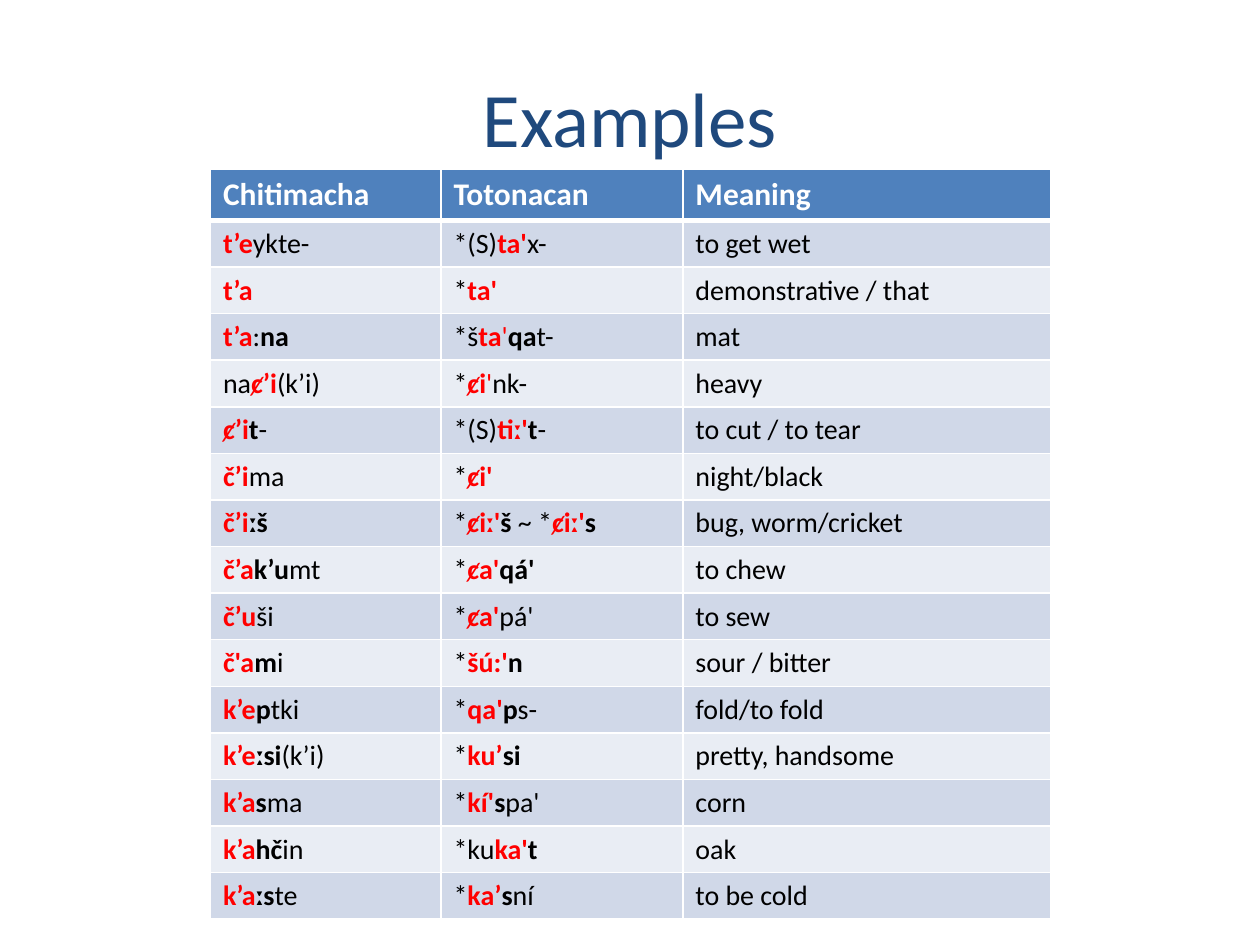
from lxml.etree import SubElement
from pptx import Presentation
from pptx.dml.color import RGBColor
from pptx.enum.text import MSO_ANCHOR, PP_ALIGN
from pptx.oxml.ns import qn
from pptx.util import Inches, Pt

COLORS = {
    "title": "1F497D", "header": "4F81BD", "odd": "D0D8E8", "even": "E9EDF4",
    "white": "FFFFFF", "black": "000000", "red": "FF0000",
}

# Runs are separated by "|"; a leading mark gives the (colour, bold) style
RUN_STYLES = {"!": ("red", True), "^": ("red", False), "+": ("black", True)}

HEADER = ["Chitimacha", "Totonacan", "Meaning"]
EXAMPLES = [
    ("!t’e|ykte-", "*(S)|!ta'|x-", "to get wet"),
    ("!t’a", "*|!ta'", "demonstrative / that"),
    ("!t’a|:|+na", "*š|!ta|^'|+qa|t-", "mat"),
    ("na|!ȼ’i|(k’i)", "*|!ȼi|^'|nk-", "heavy"),
    ("!ȼ’i|+t|-", "*(S)|!tiː'|+t|-", "to cut / to tear"),
    ("!č’i|ma", "*|!ȼi'", "night/black"),
    ("!č’i|+ːš", "*|!ȼiː'|+š| ~ *|!ȼiː'|+s", "bug, worm/cricket"),
    ("!č’a|+k’u|mt", "*|!ȼa'|+qá'", "to chew"),
    ("!č’u|ši", "*|!ȼa'|pá'", "to sew"),
    ("!č'a|+m|i", "*|!šú:'|+n", "sour / bitter"),
    ("!k’e|+p|tki", "*|!qa'|+p|s-", "fold/to fold"),
    ("!k’e|+ːsi|(k’i)", "*|!ku’|+si", "pretty, handsome"),
    ("!k’a|+s|ma", "*|!kí'|+s|pa'", "corn"),
    ("!k’a|+hč|in", "*ku|!ka'|+t", "oak"),
    ("!k’a|+ːs|te", "*|!ka’|+s|ní", "to be cold"),
]


class SlideBuilder:
    font = "Calibri"

    def __init__(self, slide):
        self.slide = slide

    def add_run(self, paragraph, text, size, color, bold=False):
        run = paragraph.add_run()
        run.text = text
        run.font.name = self.font
        run.font.size = Pt(size)
        run.font.bold = bold
        run.font.color.rgb = RGBColor.from_string(COLORS[color])

    def add_title(self, text, left, top, width, height):
        shape = self.slide.shapes.add_textbox(
            Inches(left), Inches(top), Inches(width), Inches(height))
        frame = shape.text_frame
        frame.word_wrap = True
        frame.vertical_anchor = MSO_ANCHOR.MIDDLE
        paragraph = frame.paragraphs[0]
        paragraph.alignment = PP_ALIGN.CENTER
        self.add_run(paragraph, text, 44, "title")

    def style_cell(self, cell, fill, top=1, bottom=1):
        properties = cell._tc.get_or_add_tcPr()
        borders = {"a:lnL": 1, "a:lnR": 1, "a:lnT": top, "a:lnB": bottom}
        for tag, width in borders.items():
            line = SubElement(properties, qn(tag), w=str(Pt(width)))
            solid = SubElement(line, qn("a:solidFill"))
            SubElement(solid, qn("a:srgbClr"), val=COLORS["white"])
        cell.fill.solid()
        cell.fill.fore_color.rgb = RGBColor.from_string(COLORS[fill])

    def add_word_table(self, left, top, widths, header_height, row_height):
        height = header_height + row_height * len(EXAMPLES)
        table = self.slide.shapes.add_table(
            len(EXAMPLES) + 1, len(HEADER), Inches(left), Inches(top),
            Inches(sum(widths)), Inches(height)).table
        for column, width in zip(table.columns, widths):
            column.width = Inches(width)
        for row in table.rows:
            row.height = Inches(row_height)
        table.rows[0].height = Inches(header_height)

        # Header row
        for column, text in enumerate(HEADER):
            cell = table.cell(0, column)
            self.style_cell(cell, "header", bottom=3)
            self.add_run(cell.text_frame.paragraphs[0], text, 18, "white", True)

        # Word rows in alternating bands
        for row, example in enumerate(EXAMPLES, start=1):
            for column, marked_text in enumerate(example):
                cell = table.cell(row, column)
                self.style_cell(cell, "odd" if row % 2 else "even",
                                top=3 if row == 1 else 1)
                paragraph = cell.text_frame.paragraphs[0]
                for part in marked_text.split("|"):
                    color, bold = RUN_STYLES.get(part[0], ("black", False))
                    text = part[1:] if part[0] in RUN_STYLES else part
                    self.add_run(paragraph, text, 16, color, bold)


def main():
    presentation = Presentation()
    presentation.slide_width = Inches(10)
    presentation.slide_height = Inches(7.5)
    slide = presentation.slides.add_slide(presentation.slide_layouts[6])
    builder = SlideBuilder(slide)
    builder.add_title("Examples", 0.5, 0.3, 9, 1.25)
    builder.add_word_table(1.67, 1.34, [1.83, 1.92, 2.92], 0.41, 0.37)
    presentation.save("out.pptx")


if __name__ == "__main__":
    main()
